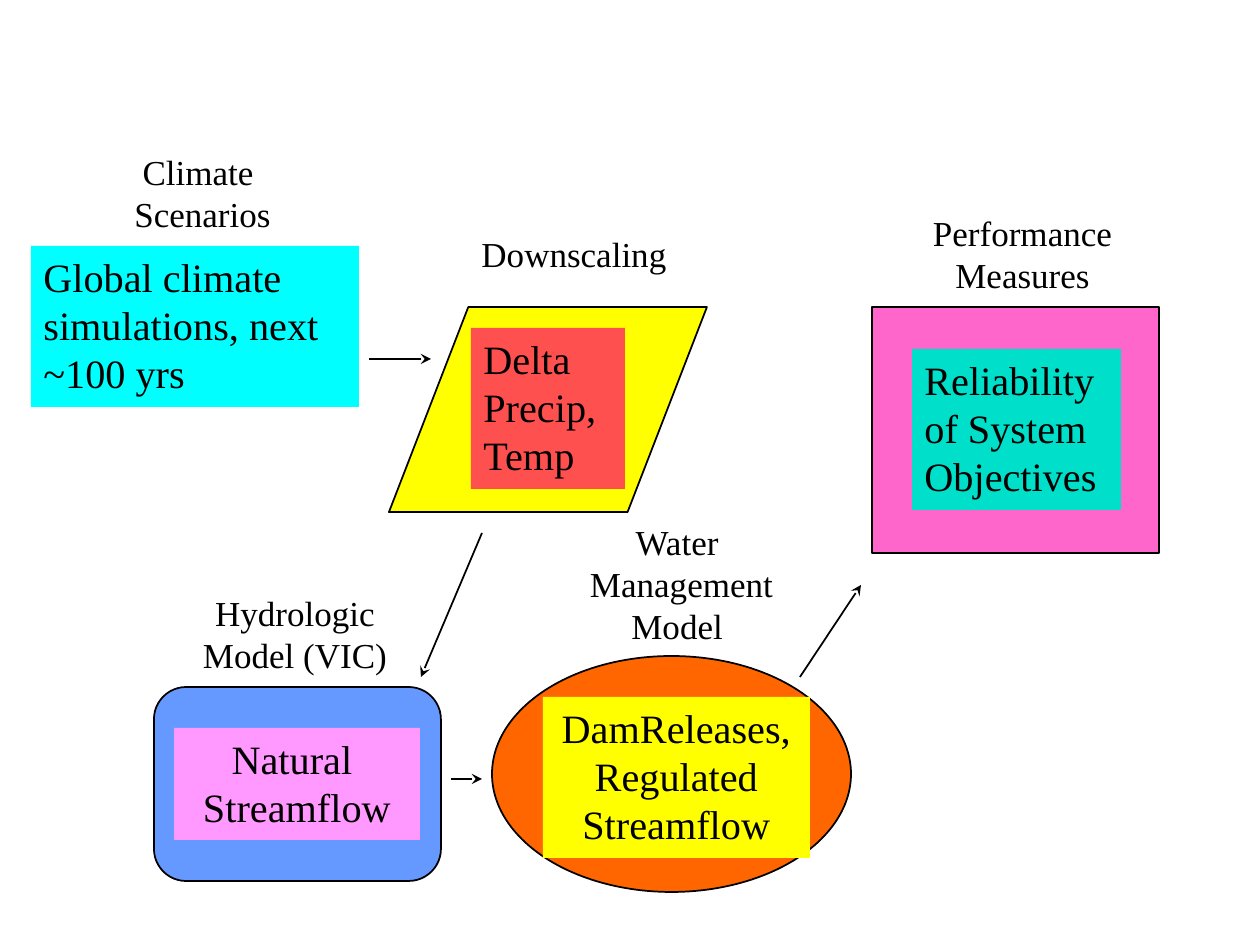
from lxml import etree
from pptx import Presentation
from pptx.dml.color import RGBColor
from pptx.enum.shapes import MSO_CONNECTOR, MSO_SHAPE
from pptx.enum.text import MSO_ANCHOR, MSO_AUTO_SIZE, PP_ALIGN
from pptx.oxml.ns import qn
from pptx.util import Emu, Pt

EMU_PER_PX = 914400 / 126
FONT = "Times New Roman"
LABEL_SIZE, PANEL_SIZE = Pt(20), Pt(23)
LINE_WIDTH = Pt(1)

RECT = MSO_SHAPE.RECTANGLE
ROUNDED = MSO_SHAPE.ROUNDED_RECTANGLE
SLANTED = MSO_SHAPE.PARALLELOGRAM
OVAL = MSO_SHAPE.OVAL
STRAIGHT = MSO_CONNECTOR.STRAIGHT
LEFT, CENTER = PP_ALIGN.LEFT, PP_ALIGN.CENTER
TOP = MSO_ANCHOR.TOP
NO_AUTOFIT = MSO_AUTO_SIZE.NONE

BLACK = RGBColor(0x00, 0x00, 0x00)
CYAN = RGBColor(0x00, 0xFF, 0xFF)
YELLOW = RGBColor(0xFF, 0xFF, 0x00)
RED = RGBColor(0xFF, 0x50, 0x50)
BLUE = RGBColor(0x66, 0x99, 0xFF)
LILAC = RGBColor(0xFF, 0x99, 0xFF)
ORANGE = RGBColor(0xFF, 0x66, 0x00)
PINK = RGBColor(0xFF, 0x66, 0xCC)
TEAL = RGBColor(0x00, 0xDF, 0xCA)


def px(*lengths):
    return [Emu(round(length * EMU_PER_PX)) for length in lengths]


def write_lines(frame, lines, size, align, wrap):
    frame.word_wrap = wrap
    frame.auto_size = NO_AUTOFIT
    frame.vertical_anchor = TOP
    for index, line in enumerate(lines):
        paragraph = frame.add_paragraph() if index else frame.paragraphs[0]
        paragraph.alignment = align
        run = paragraph.add_run()
        run.text = line
        run.font.name = FONT
        run.font.size = size
        run.font.color.rgb = BLACK


def add_filled(slide, kind, box, color):
    shape = slide.shapes.add_shape(kind, *px(*box))
    shape.shadow.inherit = False
    shape.fill.solid()
    shape.fill.fore_color.rgb = color
    return shape


def add_outline(slide, kind, box, color, adjustment=None):
    outline = add_filled(slide, kind, box, color)
    outline.line.color.rgb = BLACK
    outline.line.width = LINE_WIDTH
    if adjustment is not None:
        outline.adjustments[0] = adjustment


def add_panel(slide, box, color, lines, align=LEFT, wrap=True):
    panel = add_filled(slide, RECT, box, color)
    panel.line.fill.background()
    write_lines(panel.text_frame, lines, PANEL_SIZE, align, wrap)


def add_label(slide, box, lines):
    label = slide.shapes.add_textbox(*px(*box))
    write_lines(label.text_frame, lines, LABEL_SIZE, CENTER, False)


def add_arrow(slide, start, end):
    arrow = slide.shapes.add_connector(STRAIGHT, *px(*start, *end))
    arrow.line.color.rgb = BLACK
    arrow.line.width = LINE_WIDTH
    line = arrow.line._get_or_add_ln()
    etree.SubElement(line, qn("a:tailEnd"), type="stealth")
    etree.SubElement(arrow._element.spPr, qn("a:effectLst"))


def main():
    deck = Presentation()
    deck.slide_width, deck.slide_height = px(1260, 945)
    slide = deck.slides.add_slide(deck.slide_layouts[6])

    # Climate scenarios
    add_label(slide, (121, 144, 163, 97), ["Climate ", "Scenarios"])
    add_panel(slide, (31, 246, 328, 161), CYAN,
              ["Global climate simulations, next ~100 yrs"])

    # Downscaling
    add_outline(slide, SLANTED, (389, 307, 318, 205), YELLOW, 0.387)
    add_label(slide, (468, 226, 212, 55), ["Downscaling"])
    add_panel(slide, (471, 328, 154, 161), RED, ["Delta", "Precip,", "Temp"])

    # Hydrologic model
    add_outline(slide, ROUNDED, (154, 687, 287, 194), BLUE, 0.166)
    add_label(slide, (190, 585, 210, 97), ["Hydrologic", "Model (VIC)"])
    add_panel(slide, (174, 728, 246, 112), LILAC,
              ["Natural ", "Streamflow"], CENTER)

    # Water management model
    add_outline(slide, OVAL, (492, 656, 359, 236), ORANGE)
    add_label(slide, (577, 514, 209, 140), ["Water ", "Management", "Model "])
    add_panel(slide, (543, 697, 267, 161), YELLOW,
              ["DamReleases,", "Regulated", "Streamflow"], CENTER)

    # Performance measures
    add_outline(slide, RECT, (872, 307, 287, 246), PINK)
    add_label(slide, (920, 205, 205, 97), ["Performance", "Measures"])
    add_panel(slide, (912, 349, 209, 161), TEAL,
              ["Reliability", "of System", "Objectives"], wrap=False)

    # Flow from stage to stage
    for start, end in [
        ((369, 359), (431, 359)),
        ((482, 533), (421, 677)),
        ((451, 779), (482, 779)),
        ((800, 677), (861, 585)),
    ]:
        add_arrow(slide, start, end)

    deck.save("out.pptx")


if __name__ == "__main__":
    main()
